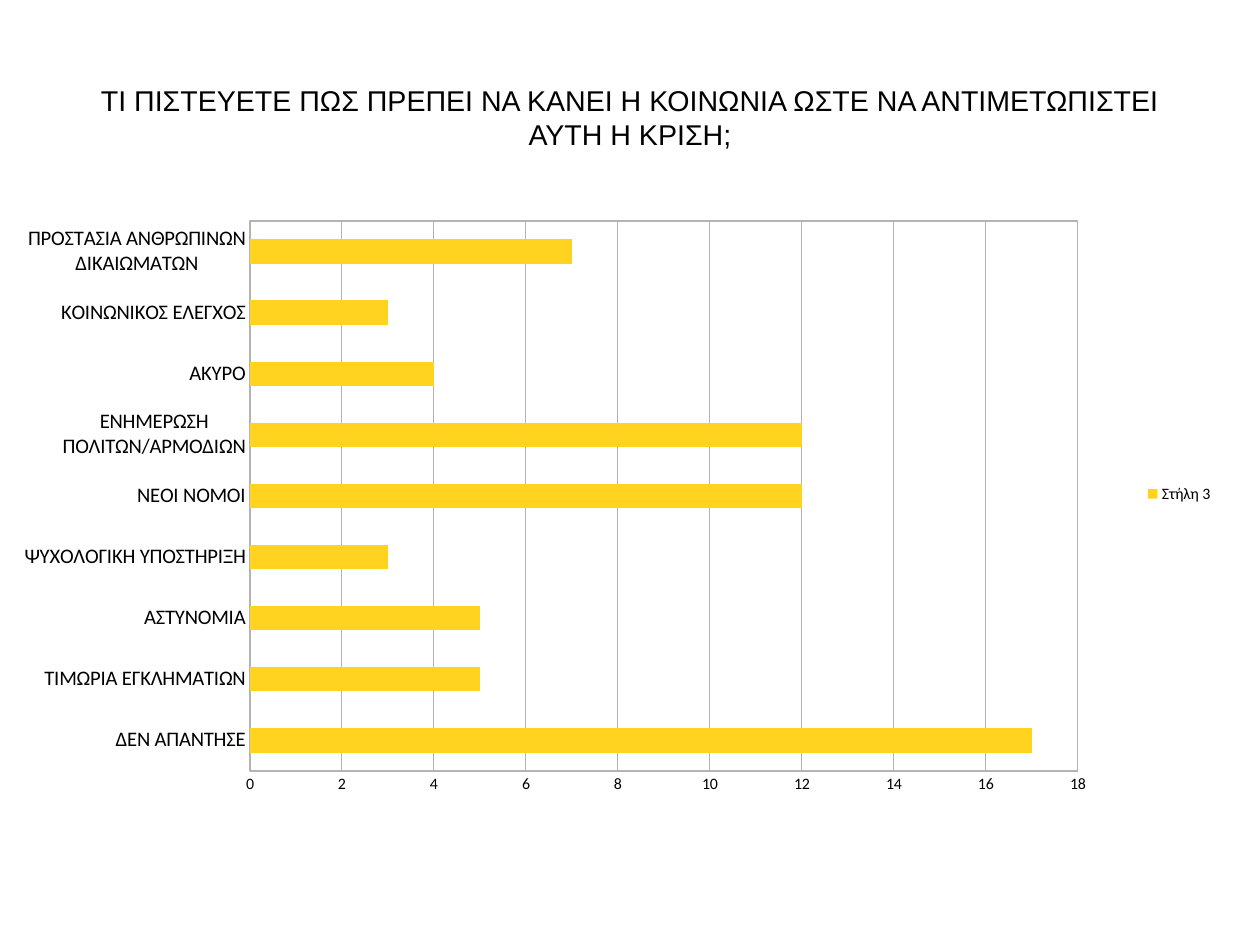
from lxml import etree
from pptx import Presentation
from pptx.chart.data import CategoryChartData
from pptx.dml.color import RGBColor
from pptx.enum.chart import XL_CHART_TYPE, XL_LEGEND_POSITION, XL_TICK_MARK
from pptx.enum.text import MSO_ANCHOR, PP_ALIGN
from pptx.oxml import parse_xml
from pptx.oxml.ns import nsdecls, qn
from pptx.util import Pt

BAR_CLUSTERED = XL_CHART_TYPE.BAR_CLUSTERED
LEGEND_RIGHT = XL_LEGEND_POSITION.RIGHT
NO_TICK = XL_TICK_MARK.NONE
MIDDLE = MSO_ANCHOR.MIDDLE
CENTER = PP_ALIGN.CENTER

TITLE = "ΤΙ ΠΙΣΤΕΥΕΤΕ ΠΩΣ ΠΡΕΠΕΙ ΝΑ ΚΑΝΕΙ Η ΚΟΙΝΩΝΙΑ ΩΣΤΕ ΝΑ ΑΝΤΙΜΕΤΩΠΙΣΤΕΙ ΑΥΤΗ Η ΚΡΙΣΗ;"
SERIES_NAME = "Στήλη 3"
ANSWERS = [
    ("ΔΕΝ ΑΠΑΝΤΗΣΕ", 17),
    ("ΤΙΜΩΡΙΑ ΕΓΚΛΗΜΑΤΙΩΝ", 5),
    ("ΑΣΤΥΝΟΜΙΑ", 5),
    ("ΨΥΧΟΛΟΓΙΚΗ ΥΠΟΣΤΗΡΙΞΗ", 3),
    ("ΝΕΟΙ ΝΟΜΟΙ", 12),
    ("ΕΝΗΜΕΡΩΣΗ ΠΟΛΙΤΩΝ/ΑΡΜΟΔΙΩΝ", 12),
    ("ΑΚΥΡΟ", 4),
    ("ΚΟΙΝΩΝΙΚΟΣ ΕΛΕΓΧΟΣ", 3),
    ("ΠΡΟΣΤΑΣΙΑ ΑΝΘΡΩΠΙΝΩΝ ΔΙΚΑΙΩΜΑΤΩΝ", 7),
]
BLACK, GREY, YELLOW = "000000", "B3B3B3", "FFD320"
EMU_PER_PX = 8000
SLIDE_SIZE = (1260, 945)
TITLE_BOX = (63, 38, 1134, 158)
CHART_BOX = (-19, 162, 1244, 664)
PLOT_BOX = (250, 221, 828, 550)


def px(lengths):
    return [length * EMU_PER_PX for length in lengths]


def color(value):
    return RGBColor.from_string(value)


def set_values(target, values):
    for name, value in values.items():
        setattr(target, name, value)


def style_font(font, name, size):
    set_values(font, {"name": name, "size": Pt(size), "bold": False})
    font.color.rgb = color(BLACK)


def style_line(line):
    line.width = Pt(0.75)
    line.color.rgb = color(GREY)


def add_title(slide):
    frame = slide.shapes.add_textbox(*px(TITLE_BOX)).text_frame
    set_values(frame, {"word_wrap": True, "vertical_anchor": MIDDLE, "margin_left": 0,
                       "margin_right": 0, "margin_top": 0, "margin_bottom": 0})
    paragraph = frame.paragraphs[0]
    paragraph.alignment = CENTER
    run = paragraph.add_run()
    run.text = TITLE
    style_font(run.font, "Arial", 18)


def place_plot(chart):
    plot_area = chart.plots[0]._element.getparent()
    for old_layout in plot_area.findall(qn("c:layout")):
        plot_area.remove(old_layout)
    left, top, width, height = CHART_BOX
    fractions = {
        "x": (PLOT_BOX[0] - left) / width,
        "y": (PLOT_BOX[1] - top) / height,
        "w": PLOT_BOX[2] / width,
        "h": PLOT_BOX[3] / height,
    }
    layout = parse_xml(
        f'<c:layout {nsdecls("c")}><c:manualLayout><c:layoutTarget val="inner"/>'
        '<c:xMode val="edge"/><c:yMode val="edge"/></c:manualLayout></c:layout>')
    for name, fraction in fractions.items():
        etree.SubElement(layout[0], qn(f"c:{name}")).set("val", f"{fraction:.4f}")
    plot_area.insert(0, layout)
    plot_area.append(parse_xml(
        f'<c:spPr {nsdecls("c", "a")}><a:noFill/><a:ln w="9525"><a:solidFill>'
        f'<a:srgbClr val="{GREY}"/></a:solidFill></a:ln></c:spPr>'))


def add_answer_chart(slide):
    data = CategoryChartData()
    data.categories = [answer for answer, count in ANSWERS]
    data.add_series(SERIES_NAME, [count for answer, count in ANSWERS])
    chart = slide.shapes.add_chart(BAR_CLUSTERED, *px(CHART_BOX), data).chart
    set_values(chart, {"has_title": False, "has_legend": True})
    style_font(chart.font, "Calibri", 10)
    set_values(chart.legend, {"position": LEGEND_RIGHT, "include_in_layout": False})
    style_font(chart.legend.font, "Calibri", 10)

    plot = chart.plots[0]
    set_values(plot, {"gap_width": 150, "vary_by_categories": False})
    fill = plot.series[0].format.fill
    fill.solid()
    fill.fore_color.rgb = color(YELLOW)

    for axis, size in ((chart.category_axis, 13), (chart.value_axis, 10)):
        set_values(axis, {"major_tick_mark": NO_TICK, "minor_tick_mark": NO_TICK})
        style_font(axis.tick_labels.font, "Calibri", size)
        style_line(axis.format.line)
    set_values(chart.value_axis, {"minimum_scale": 0, "maximum_scale": 18,
                                  "major_unit": 2, "has_major_gridlines": True})
    style_line(chart.value_axis.major_gridlines.format.line)
    place_plot(chart)


def main():
    """Build the survey slide with its title and bar chart."""
    presentation = Presentation()
    presentation.slide_width, presentation.slide_height = px(SLIDE_SIZE)
    slide = presentation.slides.add_slide(presentation.slide_layouts[6])
    add_title(slide)
    add_answer_chart(slide)
    presentation.save("out.pptx")


if __name__ == "__main__":
    main()
